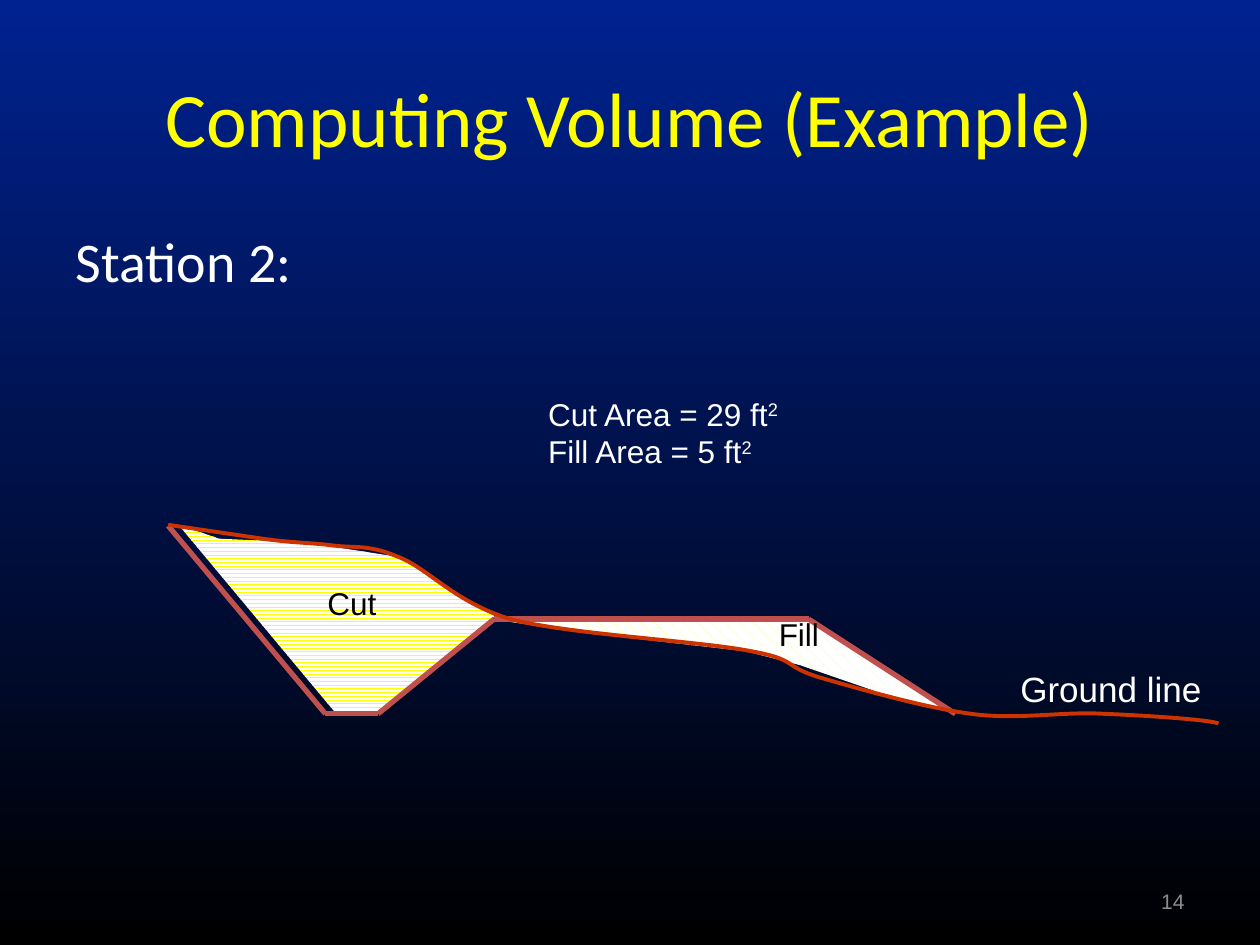
from dataclasses import dataclass
from itertools import pairwise

from lxml import etree
from pptx import Presentation
from pptx import util as u
from pptx.dml.color import RGBColor
from pptx.enum import dml, shapes, text
from pptx.oxml import ns


@dataclass(frozen=True)
class Theme:
    """Colours, fonts, type sizes and line widths of the slide."""
    sky: str = "002290"
    night: str = "000000"
    title: str = "FFFF00"
    light: str = "FFFFFF"
    dark: str = "000000"
    muted: str = "8C8C8C"
    cut: str = "FFFF00"
    fill: str = "FFFF66"
    road: str = "C0504D"
    ground: str = "CC3300"
    heading_font: str = "Calibri"
    label_font: str = "Arial"
    title_size: int = 44
    body_size: int = 32
    ground_size: int = 20
    label_size: int = 18
    number_size: int = 12
    road_width: float = 3
    ground_width: float = 2.25


THEME = Theme()

CUT_AREA = [(0.21, 0), (1.03, 0.28), (2.79, 0.36), (4.59, 0.64), (5.45, 1.12),
            (6.16, 1.63), (6.59, 1.84), (4.23, 3.81), (3.39, 3.81)]
FILL_AREA = [(8.5, 2.19), (6.56, 1.91), (12.91, 1.91), (15.87, 3.81),
             (14.42, 3.41), (12.74, 2.83), (11.65, 2.55)]
ROAD = [(0, 0.02), (3.17, 3.81), (4.23, 3.81), (6.57, 1.9), (12.91, 1.9), (15.87, 3.81)]
GROUND = [(0, 0),
          (0.33, 0.05), (1.36, 0.2), (1.9, 0.28),
          (2.46, 0.36), (2.84, 0.36), (3.27, 0.41),
          (3.73, 0.48), (4.01, 0.38), (4.62, 0.64),
          (5.23, 0.86), (5.77, 1.57), (6.93, 1.91),
          (8.13, 2.21), (10.67, 2.34), (11.71, 2.54),
          (12.72, 2.72), (12.37, 2.84), (13.11, 3.07),
          (13.84, 3.28), (15.21, 3.68), (16.18, 3.81),
          (17.12, 3.94), (18.01, 3.76), (18.85, 3.81),
          (19.68, 3.84), (21.13, 3.94), (21.17, 4.01)]


def rgb(value):
    """Turn a hex string into a colour."""
    return RGBColor.from_string(value)


def format_runs(text_frame, size, color, font):
    """Give every run of a text frame the same type."""
    for paragraph in text_frame.paragraphs:
        for run in paragraph.runs:
            run.font.size = u.Pt(size)
            run.font.name = font
            run.font.color.rgb = rgb(color)


def add_label(slide, box, words, size, color, font=THEME.label_font):
    """Place wrapped text in a box and return its text frame."""
    text_frame = slide.shapes.add_textbox(*map(u.Cm, box)).text_frame
    text_frame.word_wrap = True
    text_frame.text = words
    format_runs(text_frame, size, color, font)
    return text_frame


def add_outline(slide, origin, points, close):
    """Draw straight segments through points given in cm from an origin."""
    placed = [(u.Cm(origin[0] + x), u.Cm(origin[1] + y)) for x, y in points]
    builder = slide.shapes.build_freeform(*placed[0])
    builder.add_line_segments(placed[1:], close=close)
    shape = builder.convert_to_shape()
    shape.shadow.inherit = False
    return shape


def add_area(slide, origin, points, pattern, color):
    """Draw a patterned area without a border."""
    shape = add_outline(slide, origin, points, True)
    shape.fill.patterned()
    shape.fill.pattern = pattern
    shape.fill.fore_color.rgb = rgb(color)
    shape.fill.back_color.rgb = rgb(THEME.light)
    shape.line.fill.background()


def add_road(slide, origin):
    """Draw the road profile as connectors between its hinge points."""
    placed = [(u.Cm(origin[0] + x), u.Cm(origin[1] + y)) for x, y in ROAD]
    for start, end in pairwise(placed):
        line = slide.shapes.add_connector(shapes.MSO_CONNECTOR.STRAIGHT, *start, *end)
        line.line.color.rgb = rgb(THEME.road)
        line.line.width = u.Pt(THEME.road_width)
        etree.SubElement(line._element.spPr, ns.qn("a:effectLst"))


def add_ground(slide, origin):
    """Draw the ground line, joining each three points into one curve."""
    shape = add_outline(slide, origin, GROUND, False)
    shape.fill.background()
    shape.line.color.rgb = rgb(THEME.ground)
    shape.line.width = u.Pt(THEME.ground_width)
    segments = list(shape._element.iter(ns.qn("a:lnTo")))
    for first in range(0, len(segments), 3):
        group = segments[first:first + 3]
        curve = etree.SubElement(group[0].getparent(), ns.qn("a:cubicBezTo"))
        for segment in group:
            curve.append(segment[0])
            segment.getparent().remove(segment)


def add_section(slide, left, top):
    """Draw the cross-section with its areas, road, ground and labels."""
    origin = left, top
    add_area(slide, origin, CUT_AREA, dml.MSO_PATTERN.ZIG_ZAG, THEME.cut)
    add_area(slide, origin, FILL_AREA, dml.MSO_PATTERN.SHINGLE, THEME.fill)
    add_label(slide, (left + 16.93, top + 2.75, 5.08, 1.09), "Ground line",
              THEME.ground_size, THEME.light)
    add_road(slide, origin)
    for name, x, y in (("Cut", 2.96, 1.06), ("Fill", 12.06, 1.69)):
        add_label(slide, (left + x, top + y, 1.91, 1.27), name, THEME.label_size, THEME.dark)
    add_ground(slide, origin)


def add_areas(slide, box):
    """List the cut and fill areas with their raised exponents."""
    text_frame = add_label(slide, box, "Cut Area = 29 ft\nFill Area = 5 ft",
                           THEME.label_size, THEME.light)
    for paragraph in text_frame.paragraphs:
        exponent = paragraph.add_run()
        exponent.text = "2"
        exponent._r.get_or_add_rPr().set("baseline", "30000")
    format_runs(text_frame, THEME.label_size, THEME.light, THEME.label_font)


def add_title(slide, box, words):
    """Move, fill and format the title placeholder."""
    title = slide.shapes.title
    title.left, title.top, title.width, title.height = map(u.Cm, box)
    title.text_frame.text = words
    title.text_frame.vertical_anchor = text.MSO_ANCHOR.MIDDLE
    title.text_frame.paragraphs[0].alignment = text.PP_ALIGN.CENTER
    format_runs(title.text_frame, THEME.title_size, THEME.title, THEME.heading_font)


def add_station(slide, box, words):
    """Place the station heading."""
    text_frame = add_label(slide, box, words, THEME.body_size, THEME.light, THEME.heading_font)
    text_frame.paragraphs[0].space_before = u.Pt(0.2 * THEME.body_size)


def add_number(slide, box, words):
    """Place the slide number at the right of its box."""
    text_frame = add_label(slide, box, words, THEME.number_size, THEME.muted)
    text_frame.vertical_anchor = text.MSO_ANCHOR.MIDDLE
    text_frame.paragraphs[0].alignment = text.PP_ALIGN.RIGHT


def paint_background(slide):
    """Fill the background with a gradient from top to bottom."""
    fill = slide.background.fill
    fill.gradient()
    fill.gradient_angle = 270
    for stop, color in zip(fill.gradient_stops, (THEME.sky, THEME.night)):
        stop.color.rgb = rgb(color)


def main():
    """Build and save the slide."""
    presentation = Presentation()
    presentation.slide_width, presentation.slide_height = u.Cm(25.4), u.Cm(19.05)
    slide = presentation.slides.add_slide(presentation.slide_layouts[5])
    paint_background(slide)
    add_title(slide, (1.27, 0.76, 22.86, 3.18), "Computing Volume (Example)")
    add_station(slide, (1.27, 4.45, 22.86, 12.57), "Station 2:")
    add_areas(slide, (10.8, 7.83, 10.8, 1.8))
    add_section(slide, 3.39, 10.58)
    add_number(slide, (18.2, 17.66, 5.93, 1.01), "14")
    presentation.save("out.pptx")


if __name__ == "__main__":
    main()
